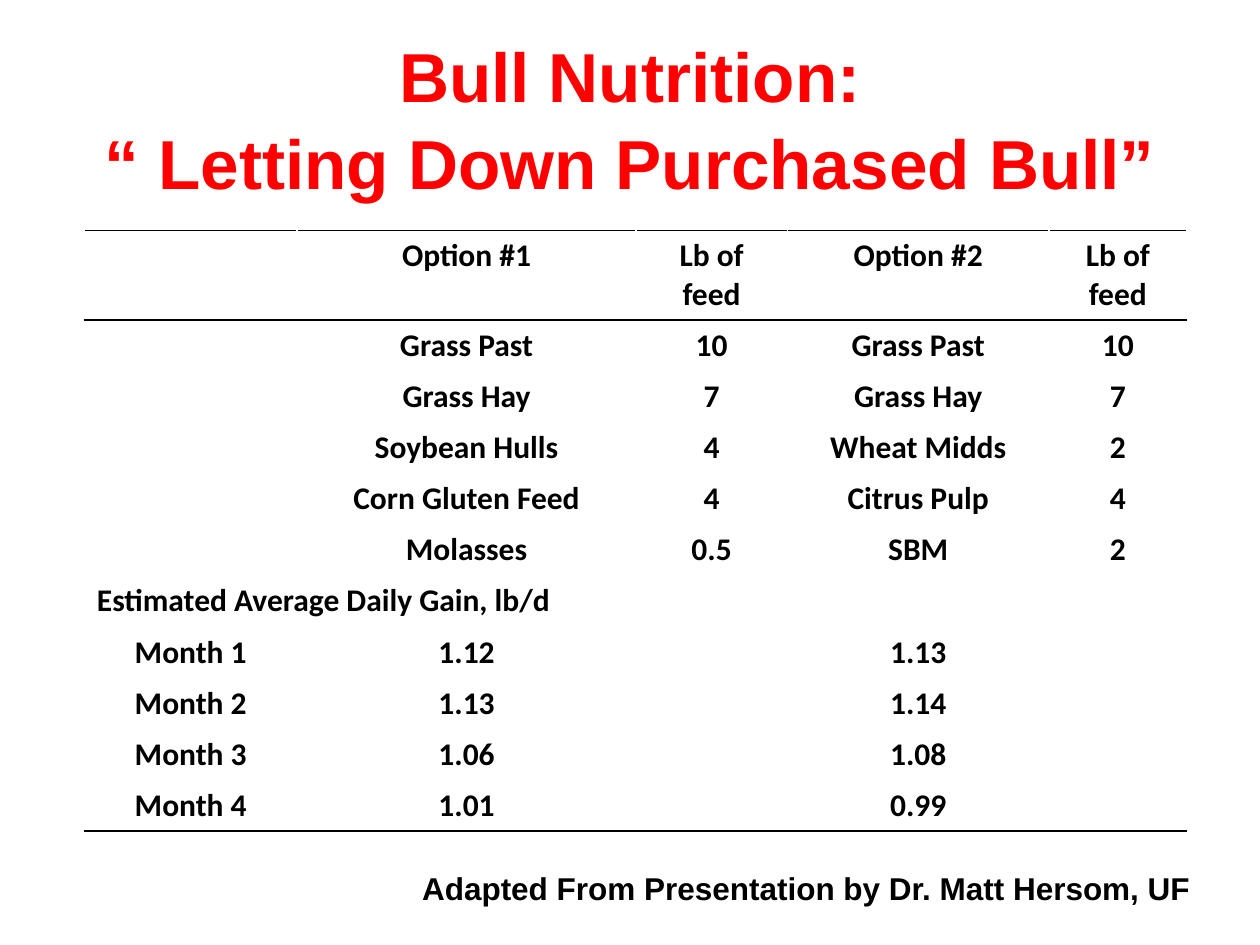
from lxml import etree
from pptx import Presentation
from pptx.dml.color import RGBColor
from pptx.enum.text import MSO_ANCHOR, MSO_AUTO_SIZE, PP_ALIGN
from pptx.oxml.ns import qn
from pptx.util import Cm, Pt

CENTER, LEFT = PP_ALIGN.CENTER, PP_ALIGN.LEFT
MIDDLE = MSO_ANCHOR.MIDDLE
NO_AUTOFIT = MSO_AUTO_SIZE.NONE
FIT_SHAPE = MSO_AUTO_SIZE.SHAPE_TO_FIT_TEXT
BLACK, WHITE, RED = "000000", "FFFFFF", "FF0000"


def format_text(paragraph, font_name, size, color, alignment):
    paragraph.alignment = alignment
    for font in [paragraph.font] + [run.font for run in paragraph.runs]:
        font.name = font_name
        font.size = Pt(size)
        font.bold = True
        font.color.rgb = RGBColor.from_string(color)


def set_borders(cell, top, bottom):
    """Draw 1 pt borders: white at the sides, given colours above and below."""
    properties = cell._tc.get_or_add_tcPr()
    colors = {"a:lnL": WHITE, "a:lnR": WHITE, "a:lnT": top, "a:lnB": bottom}
    for position, (tag, color) in enumerate(colors.items()):
        line = etree.Element(qn(tag), w=str(Pt(1)))
        fill = etree.SubElement(line, qn("a:solidFill"))
        etree.SubElement(fill, qn("a:srgbClr"), val=color)
        properties.insert(position, line)


presentation = Presentation()
presentation.slide_width = Cm(25.4)
presentation.slide_height = Cm(19.05)
slide = presentation.slides.add_slide(presentation.slide_layouts[5])

# Title
title = slide.shapes.title
title.left, title.top = Cm(1.27), Cm(0.76)
title.width, title.height = Cm(22.86), Cm(3.18)
title.text_frame.text = "Bull Nutrition:\v“ Letting Down Purchased Bull”"
title.text_frame.vertical_anchor = MIDDLE
title.text_frame.auto_size = NO_AUTOFIT
title_paragraph = title.text_frame.paragraphs[0]
title_paragraph.line_spacing = 1.04
format_text(title_paragraph, "Arial", 39.6, RED, CENTER)

# Feed options and daily gain
feed_rows = [
    ["", "Option #1", "Lb of feed", "Option #2", "Lb of feed"],
    ["", "Grass Past", "10", "Grass Past", "10"],
    ["", "Grass Hay", "7", "Grass Hay", "7"],
    ["", "Soybean Hulls", "4", "Wheat Midds", "2"],
    ["", "Corn Gluten Feed", "4", "Citrus Pulp", "4"],
    ["", "Molasses", "0.5", "SBM", "2"],
    ["Estimated Average Daily Gain, lb/d", "", "", "", ""],
    ["Month 1", "1.12", "", "1.13", ""],
    ["Month 2", "1.13", "", "1.14", ""],
    ["Month 3", "1.06", "", "1.08", ""],
    ["Month 4", "1.01", "", "0.99", ""],
]
column_widths = [4.29, 6.83, 3.05, 5.28, 2.77]
header_height, row_height = 1.78, 1.03
gain_row = 6
last_row = len(feed_rows) - 1

table = slide.shapes.add_table(
    len(feed_rows), len(column_widths), Cm(1.7), Cm(4.65),
    Cm(sum(column_widths)), Cm(header_height + last_row * row_height),
).table
table.first_row = False
table.horz_banding = False
for column, width in zip(table.columns, column_widths):
    column.width = Cm(width)

for row_index, values in enumerate(feed_rows):
    table.rows[row_index].height = Cm(row_height if row_index else header_height)
    top = BLACK if row_index in (0, 1) else WHITE
    bottom = BLACK if row_index in (0, last_row) else WHITE
    alignment = LEFT if row_index == gain_row else CENTER
    for column_index, value in enumerate(values):
        cell = table.cell(row_index, column_index)
        cell.text_frame.text = value
        format_text(cell.text_frame.paragraphs[0], "Calibri", 18, BLACK, alignment)
        cell.fill.background()
        set_borders(cell, top, bottom)

table.cell(gain_row, 0).merge(table.cell(gain_row, len(column_widths) - 1))

# Credit line
credit = slide.shapes.add_textbox(Cm(8.26), Cm(17.4), Cm(16.71), Cm(1.02))
credit.text_frame.word_wrap = True
credit.text_frame.auto_size = FIT_SHAPE
credit.text_frame.text = "Adapted From Presentation by Dr. Matt Hersom, UF"
format_text(credit.text_frame.paragraphs[0], "Arial", 18, BLACK, LEFT)

presentation.save("out.pptx")
